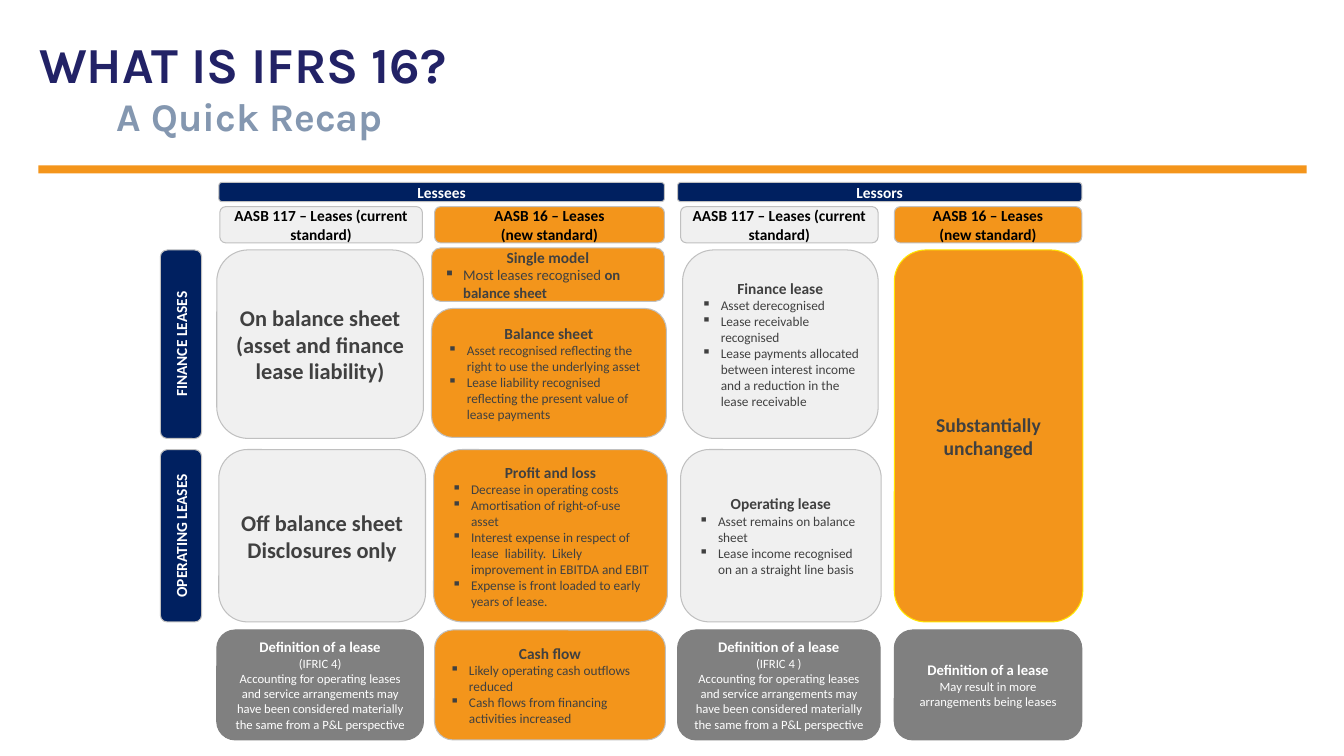
from pptx import Presentation
from pptx import util as u
from pptx.dml.color import RGBColor
from pptx.enum import shapes, text
from pptx.oxml.ns import qn
from lxml import etree

PX = 9144  # 100 px to the inch
SLIDE_SIZE = (1333, 750)

THEME = {
    "title_font": "Karla",
    "body_font": "Calibri",
    "line_width": 0.75,
    "rule": "F4951B",
    # fill, line, text colour
    "navy": ("002060", "C0C0C0", "FFFFFF"),
    "head_light": ("F0F0F0", "C0C0C0", "000000"),
    "head_orange": ("F3951B", "C0C0C0", "000000"),
    "light": ("F0F0F0", "C0C0C0", "404040"),
    "orange": ("F3951B", "C0C0C0", "404040"),
    "outlined": ("F3951B", "FFE600", "404040"),
    "grey": ("808080", "808080", "FFFFFF"),
    # size, bold, bulleted
    "label": (11, True, False),
    "statement": (16, True, False),
    "verdict": (14, True, False),
    "definition": (10.5, True, False),
    "note": (9, False, False),
    "bullet": (9.5, False, True),
    "model": (10.5, False, True),
}

# text, (left, top, width, height), size, colour, line spacing in points
TITLES = [
    ("WHAT IS IFRS 16?", (29, 28, 1074, 71), 36, "222266", None),
    ("A Quick Recap", (106, 104, 715, 42), 28, "8497B0", 21),
]
RULE = (38, 164, 1258, 8)

# top, height
ROWS = {
    "party": (181, 19),
    "standard": (205, 36),
    "finance": (248, 187),
    "model": (246, 53),
    "balance": (306, 128),
    "operating": (446, 171),
    "both": (248, 369),
    "definition": (625, 109),
}

CURRENT = [("label", "AASB 117 – Leases (current standard)")]
NEW = [("label", "AASB 16 – Leases"), ("label", "(new standard)")]
ACCOUNTING = ("note", "Accounting for operating leases and service arrangements may "
              "have been considered materially the same from a P&L perspective")

# row, left, width, look, paragraphs; ** starts bold text
BOXES = [
    ("party", 217, 442, "navy", [("label", "Lessees")]),
    ("party", 672, 401, "navy", [("label", "Lessors")]),
    ("standard", 218, 201, "head_light", CURRENT),
    ("standard", 431, 228, "head_orange", NEW),
    ("standard", 675, 196, "head_light", CURRENT),
    ("standard", 887, 186, "head_orange", NEW),
    ("finance", 215, 205, "light", [
        ("statement", "On balance sheet (asset and finance lease liability)")]),
    ("operating", 217, 205, "light", [
        ("statement", "Off balance sheet"),
        ("statement", "Disclosures only")]),
    ("definition", 215, 205, "grey", [
        ("definition", "Definition of a lease"), ("note", "(IFRIC 4)"), ACCOUNTING]),
    ("model", 428, 231, "orange", [
        ("label", "Single model"),
        ("model", "Most leases recognised **on balance sheet")]),
    ("balance", 428, 233, "orange", [
        ("label", "Balance sheet"),
        ("bullet", "Asset recognised reflecting the right to use the underlying asset"),
        ("bullet", "Lease liability recognised reflecting the present value of "
                   "lease payments")]),
    ("operating", 430, 232, "orange", [
        ("label", "Profit and loss"),
        ("bullet", "Decrease in operating costs"),
        ("bullet", "Amortisation of right-of-use asset"),
        ("bullet", "Interest expense in respect of lease  liability.  Likely "
                   "improvement in EBITDA and EBIT"),
        ("bullet", "Expense is front loaded to early years of lease.")]),
    ("definition", 431, 229, "orange", [
        ("label", "Cash flow"),
        ("bullet", "Likely operating cash outflows reduced"),
        ("bullet", "Cash flows from financing activities increased")]),
    ("finance", 677, 194, "light", [
        ("label", "Finance lease"),
        ("bullet", "Asset derecognised"),
        ("bullet", "Lease receivable recognised"),
        ("bullet", "Lease payments allocated between interest income and "
                   "a reduction in the lease receivable")]),
    ("operating", 675, 199, "light", [
        ("label", "Operating lease"),
        ("bullet", "Asset remains on balance sheet"),
        ("bullet", "Lease income recognised on an a straight line basis")]),
    ("definition", 672, 201, "grey", [
        ("definition", "Definition of a lease"), ("note", "(IFRIC 4 )"), ACCOUNTING]),
    ("both", 887, 187, "outlined", [("verdict", "Substantially unchanged")]),
    ("definition", 887, 186, "grey", [
        ("definition", "Definition of a lease"),
        ("note", "May result in more arrangements being leases")]),
]

SIDE_LEFT, SIDE_WIDTH = 159, 41
SIDE_LABELS = [("finance", "FINANCE LEASES"), ("operating", "OPERATING LEASES")]
BULLET_INDENT = 19


def emu(box):
    return [value * PX for value in box]


def set_font(font, **values):
    values["color"] = RGBColor.from_string(values["color"])
    for name, value in values.items():
        if name == "color":
            font.color.rgb = value
        else:
            setattr(font, name, value)


def add_bullet(paragraph):
    properties = paragraph._p.get_or_add_pPr()
    properties.set("marL", str(BULLET_INDENT * PX))
    properties.set("indent", str(-BULLET_INDENT * PX))
    etree.SubElement(properties, qn("a:buChar")).set("char", "▪")


def add_paragraph(paragraph, style, words, color):
    size, bold, bulleted = THEME[style]
    paragraph.alignment = text.PP_ALIGN.LEFT if bulleted else text.PP_ALIGN.CENTER
    if bulleted:
        add_bullet(paragraph)
    for index, part in enumerate(words.split("**")):
        run = paragraph.add_run()
        run.text = part
        set_font(run.font, name=THEME["body_font"], size=u.Pt(size),
                 bold=bold or index > 0, color=color)


def add_filled(slide, kind, box, fill):
    shape = slide.shapes.add_shape(kind, *emu(box))
    shape.shadow.inherit = False
    shape.fill.solid()
    shape.fill.fore_color.rgb = RGBColor.from_string(fill)
    return shape


def add_box(slide, box, look, paragraphs):
    fill, line, color = THEME[look]
    shape = add_filled(slide, shapes.MSO_SHAPE.ROUNDED_RECTANGLE, box, fill)
    shape.line.color.rgb = RGBColor.from_string(line)
    shape.line.width = u.Pt(THEME["line_width"])
    frame = shape.text_frame
    frame.word_wrap = True
    frame.vertical_anchor = text.MSO_ANCHOR.MIDDLE
    for index, (style, words) in enumerate(paragraphs):
        paragraph = frame.add_paragraph() if index else frame.paragraphs[0]
        add_paragraph(paragraph, style, words, color)
    return shape


def add_title(slide, words, box, size, color, spacing):
    frame = slide.shapes.add_textbox(*emu(box)).text_frame
    frame.word_wrap = True
    paragraph = frame.paragraphs[0]
    if spacing:
        paragraph.line_spacing = u.Pt(spacing)
    run = paragraph.add_run()
    run.text = words
    set_font(run.font, name=THEME["title_font"], size=u.Pt(size), bold=True, color=color)


def main():
    presentation = Presentation()
    presentation.slide_width, presentation.slide_height = emu(SLIDE_SIZE)
    slide = presentation.slides.add_slide(presentation.slide_layouts[6])

    for title in TITLES:
        add_title(slide, *title)
    rule = add_filled(slide, shapes.MSO_SHAPE.RECTANGLE, RULE, THEME["rule"])
    rule.line.fill.background()

    for row, left, width, look, paragraphs in BOXES:
        top, height = ROWS[row]
        add_box(slide, (left, top, width, height), look, paragraphs)

    for row, words in SIDE_LABELS:
        top, length = ROWS[row]
        # a turned shape keeps its centre, so its width runs down the row
        shift = (length - SIDE_WIDTH) // 2
        box = (SIDE_LEFT - shift, top + shift, length, SIDE_WIDTH)
        add_box(slide, box, "navy", [("label", words)]).rotation = 270

    presentation.save("out.pptx")


if __name__ == "__main__":
    main()
